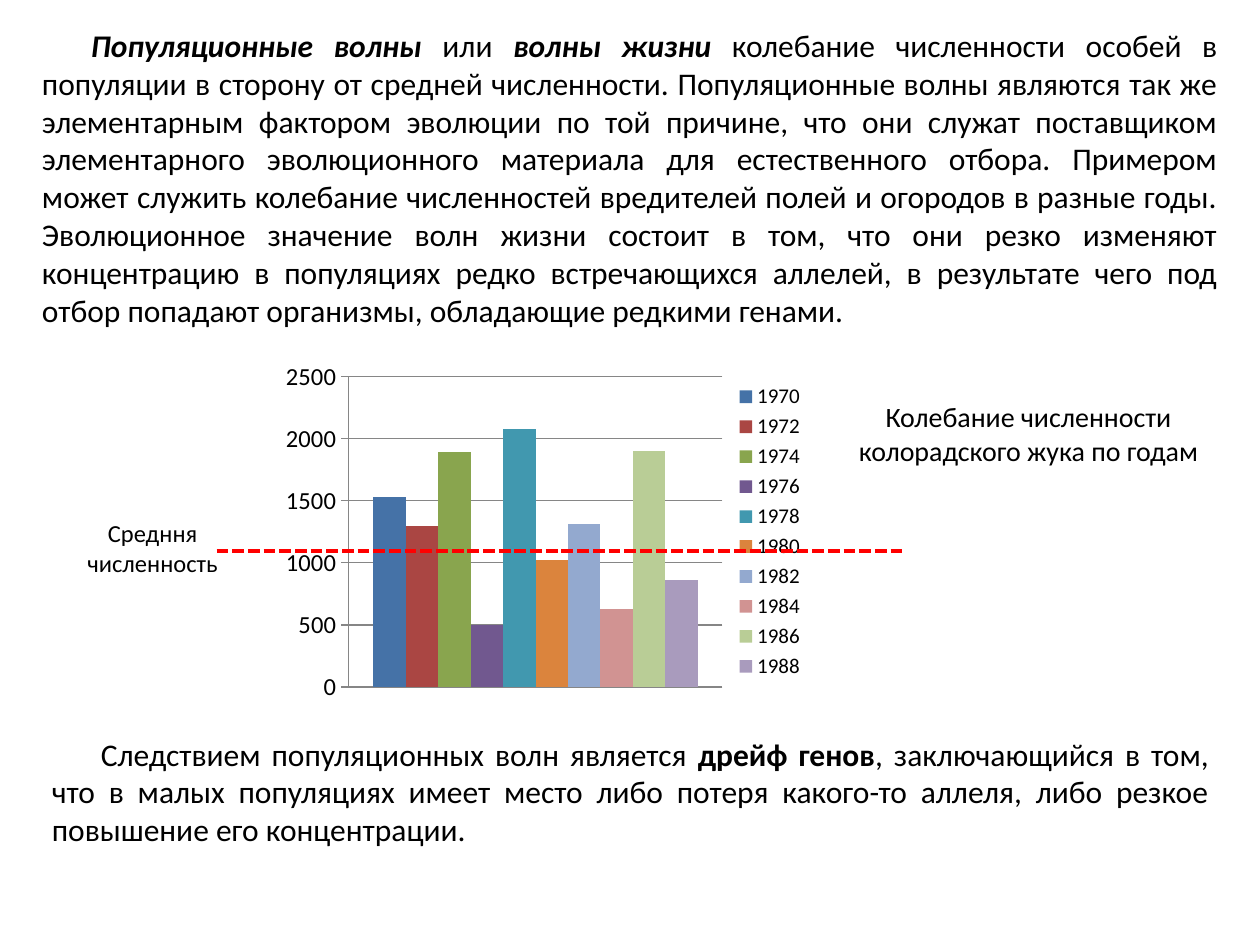
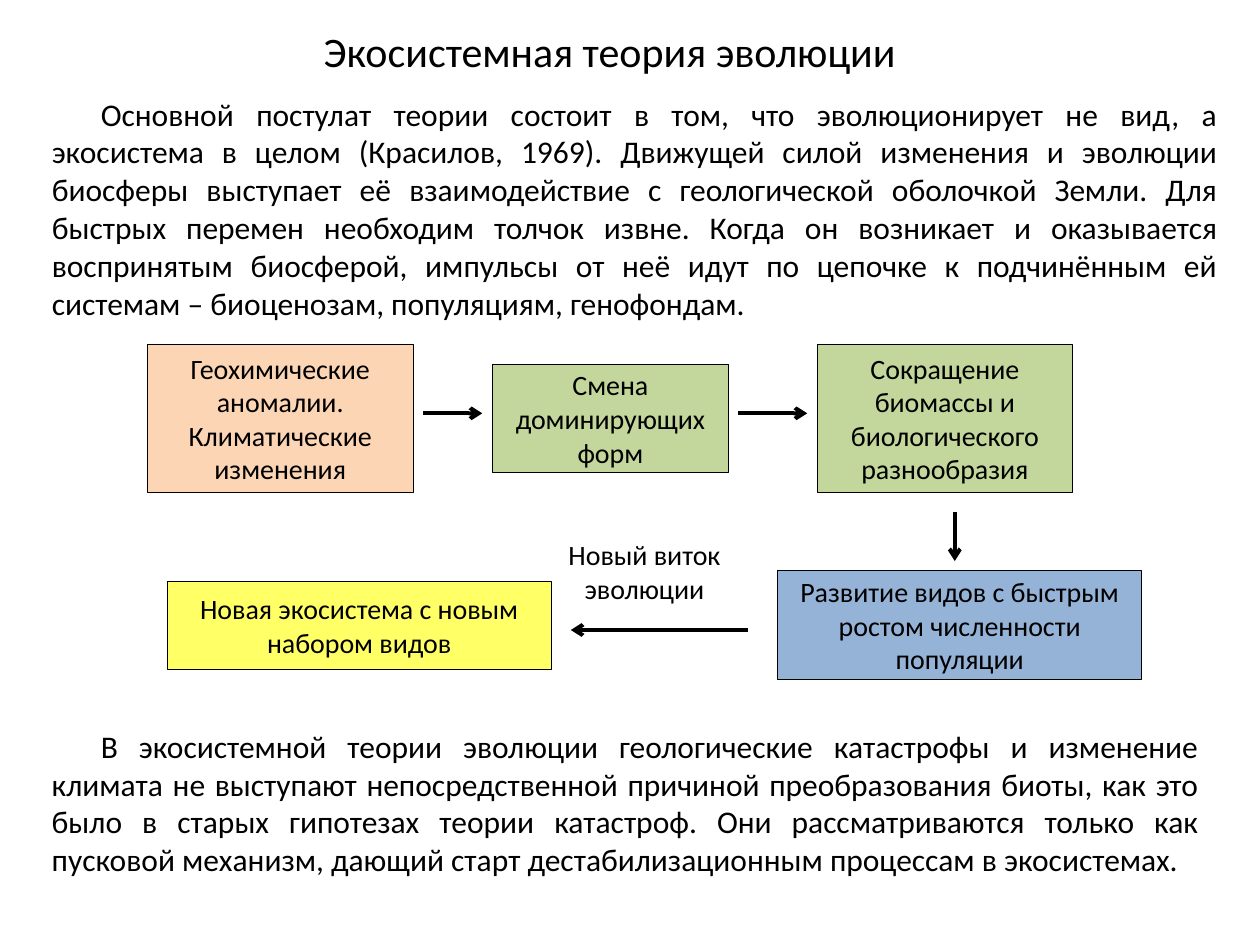
import pptx
import pptx.util
import pptx.chart.data
import pptx.dml.color
import pptx.enum.chart
import pptx.enum.dml
import pptx.enum.shapes
import pptx.enum.text
import pptx.oxml
import pptx.oxml.ns

Pt = pptx.util.Pt
RGBColor = pptx.dml.color.RGBColor
PP_ALIGN = pptx.enum.text.PP_ALIGN
qn = pptx.oxml.ns.qn

FONT = "Calibri"
BLACK = RGBColor(0x00, 0x00, 0x00)
RED = RGBColor(0xFF, 0x00, 0x00)
GREY = RGBColor(0x86, 0x86, 0x86)
PEACH = RGBColor(0xFC, 0xD5, 0xB5)
GREEN = RGBColor(0xC3, 0xD6, 0x9B)
BLUE = RGBColor(0x95, 0xB3, 0xD7)
YELLOW = RGBColor(0xFF, 0xFF, 0x66)
SERIES_COLORS = [RGBColor.from_string(c) for c in (
    "4572A7", "AA4643", "89A54E", "71588F", "4198AF",
    "DB843D", "93A9CF", "D19392", "B9CD96", "A99BBD")]

BODY, LABEL = 18, 16
FIRST_LINE_INDENT = 28
LINE_WIDTH = 2.25


def add_text(s, box, runs, size, justified=False, fill=None, border=0.25):
    """Add a text box, or a bordered rectangle when a fill is given.

    Each run is a (text, style) pair; "b" in style is bold, "i" is italic.
    """
    box = [Pt(v) for v in box]
    if fill is None:
        sp = s.shapes.add_textbox(*box)
        sp.text_frame.auto_size = pptx.enum.text.MSO_AUTO_SIZE.SHAPE_TO_FIT_TEXT
    else:
        sp = s.shapes.add_shape(pptx.enum.shapes.MSO_SHAPE.RECTANGLE, *box)
        sp.shadow.inherit = False
        sp.fill.solid()
        sp.fill.fore_color.rgb = fill
        sp.line.color.rgb = BLACK
        sp.line.width = Pt(border)
        sp.text_frame.vertical_anchor = pptx.enum.text.MSO_ANCHOR.MIDDLE
    tf = sp.text_frame
    tf.word_wrap = True
    p = tf.paragraphs[0]
    p.alignment = PP_ALIGN.JUSTIFY if justified else PP_ALIGN.CENTER
    if justified:
        p._p.get_or_add_pPr().set("indent", str(Pt(FIRST_LINE_INDENT)))
    p.font.name, p.font.size = FONT, Pt(size)
    p.font.color.rgb = BLACK
    for text, style in runs:
        r = p.add_run()
        r.text = text
        if "b" in style:
            r.font.bold = True
        if "i" in style:
            r.font.italic = True


def add_line(s, x1, y1, x2, y2, color, arrow=False):
    cn = s.shapes.add_connector(pptx.enum.shapes.MSO_CONNECTOR.STRAIGHT,
                                Pt(x1), Pt(y1), Pt(x2), Pt(y2))
    cn.line.color.rgb = color
    cn.line.width = Pt(LINE_WIDTH)
    if arrow:
        ln = cn.line._get_or_add_ln()
        ln.append(pptx.oxml.parse_xml(
            f'<a:tailEnd {pptx.oxml.ns.nsdecls("a")} type="arrow"/>'))
    else:
        cn.line.dash_style = pptx.enum.dml.MSO_LINE.SQUARE_DOT
    cn._element.spPr.append(pptx.oxml.parse_xml(
        f'<a:effectLst {pptx.oxml.ns.nsdecls("a")}/>'))


prs = pptx.Presentation()
prs.slide_width, prs.slide_height = Pt(720), Pt(540)
blank = prs.slide_layouts[6]

# Slide 1: population waves
s = prs.slides.add_slide(blank)
add_text(s, (16.9, 11.3, 686, 181.5), [
    ("Популяционные волны ", "bi"),
    ("или ", ""),
    ("волны жизни", "bi"),
    (" колебание численности особей в популяции в сторону от средней численности. "
     "Популяционные волны являются так же элементарным фактором эволюции по той причине, "
     "что они служат поставщиком элементарного эволюционного материала для естественного "
     "отбора. Примером может служить колебание численностей вредителей полей и огородов "
     "в разные годы. Эволюционное значение волн жизни состоит в том, что они резко изменяют "
     "концентрацию в популяциях редко встречающихся аллелей, в результате чего под отбор "
     "попадают организмы, обладающие редкими генами.", ""),
], BODY, justified=True)

beetles = [1530, 1300, 1890, 500, 2080, 1020, 1310, 630, 1900, 860]
data = pptx.chart.data.CategoryChartData()
data.categories = ["1"]
for i, count in enumerate(beetles):
    data.add_series(str(1970 + 2 * i), [count])
chart = s.shapes.add_chart(pptx.enum.chart.XL_CHART_TYPE.COLUMN_CLUSTERED,
                           Pt(157.5), Pt(202.5), Pt(309.5), Pt(202.5), data).chart
chart.has_title = False
chart.font.name, chart.font.size = FONT, Pt(18)
chart.font.color.rgb = BLACK
chart.has_legend = True
chart.legend.position = pptx.enum.chart.XL_LEGEND_POSITION.RIGHT
chart.legend.include_in_layout = False
chart.legend.font.size = Pt(12)
chart.category_axis.visible = False
axis = chart.value_axis
axis.minimum_scale, axis.maximum_scale, axis.major_unit = 0, 2500, 500
axis.major_tick_mark = pptx.enum.chart.XL_TICK_MARK.CROSS
axis.tick_labels.font.size = Pt(14)
axis.format.line.color.rgb = GREY
axis.major_gridlines.format.line.color.rgb = GREY
plot = chart.plots[0]
plot.gap_width, plot.overlap = 150, 0
plot.vary_by_categories = False
for series, color in zip(plot.series, SERIES_COLORS):
    series.format.fill.solid()
    series.format.fill.fore_color.rgb = color
area = chart._chartSpace.chart.plotArea
for old in area.findall(qn("c:layout")):
    area.remove(old)
area.insert(0, pptx.oxml.parse_xml(
    f'<c:layout {pptx.oxml.ns.nsdecls("c")}><c:manualLayout>'
    '<c:layoutTarget val="inner"/><c:xMode val="edge"/><c:yMode val="edge"/>'
    '<c:x val="0.135"/><c:y val="0.063"/><c:w val="0.69"/><c:h val="0.876"/>'
    '</c:manualLayout></c:layout>'))

add_line(s, 123.8, 315, 517.5, 315, RED)
add_text(s, (22.5, 292.5, 129.5, 41.2), [("Средння численность", "")], 14)
add_text(s, (472.5, 225, 230.5, 46), [("Колебание численности колорадского жука по годам", "")], LABEL)
add_text(s, (22.5, 416.2, 675.4, 72.7), [
    ("Следствием популяционных волн является ", ""),
    ("дрейф генов", "b"),
    (", заключающийся в том, что в малых популяциях имеет место либо потеря какого-то "
     "аллеля, либо резкое повышение его концентрации.", ""),
], BODY, justified=True)

# Slide 2: ecosystem theory of evolution
s = prs.slides.add_slide(blank)
add_text(s, (84.2, 11.3, 528.5, 36), [("Экосистемная теория эволюции", "")], 24)
add_text(s, (22.5, 50.6, 680.4, 138), [
    ("Основной постулат теории состоит в том, что эволюционирует не вид, а экосистема "
     "в целом (Красилов, 1969). Движущей силой изменения и эволюции биосферы выступает "
     "её взаимодействие с геологической оболочкой Земли. Для быстрых перемен необходим "
     "толчок извне. Когда он возникает и оказывается воспринятым биосферой, импульсы от "
     "неё идут по цепочке к подчинённым ей системам – биоценозам, популяциям, "
     "генофондам.", "")], BODY, justified=True)

stages = [
    ((84.2, 196.9, 152, 84.4), "Геохимические аномалии. Климатические изменения", PEACH, 0.25),
    ((281.3, 208.1, 135, 61.9), "Смена доминирующих форм", GREEN, 0.25),
    ((466.9, 196.9, 146.2, 84.4), "Сокращение биомассы и биологического разнообразия", GREEN, 0.5),
    ((444.4, 326.2, 208.1, 61.9), "Развитие видов с быстрым ростом численности популяции", BLUE, 0.5),
    ((95.6, 331.9, 219.4, 50.6), "Новая экосистема с новым набором видов", YELLOW, 0.25),
]
for box, text, fill, border in stages:
    add_text(s, box, [(text, "")], LABEL, fill=fill, border=border)

arrows = [
    (241.9, 236.2, 275.6, 236.2),
    (421.9, 236.2, 461.3, 236.2),
    (545.6, 292.5, 545.6, 320.6),
    (427.5, 360, 326.2, 360),
]
for ends in arrows:
    add_line(s, *ends, BLACK, arrow=True)

add_text(s, (298.1, 303.8, 140.4, 46), [("Новый виток эволюции", "")], LABEL)
add_text(s, (22.5, 411.8, 669.6, 94.3), [
    ("В экосистемной теории эволюции геологические катастрофы и изменение климата не "
     "выступают непосредственной причиной преобразования биоты, как это было в старых "
     "гипотезах теории катастроф. Они рассматриваются только как пусковой механизм, дающий "
     "старт дестабилизационным процессам в экосистемах.", "")], BODY, justified=True)

prs.save("out.pptx")
